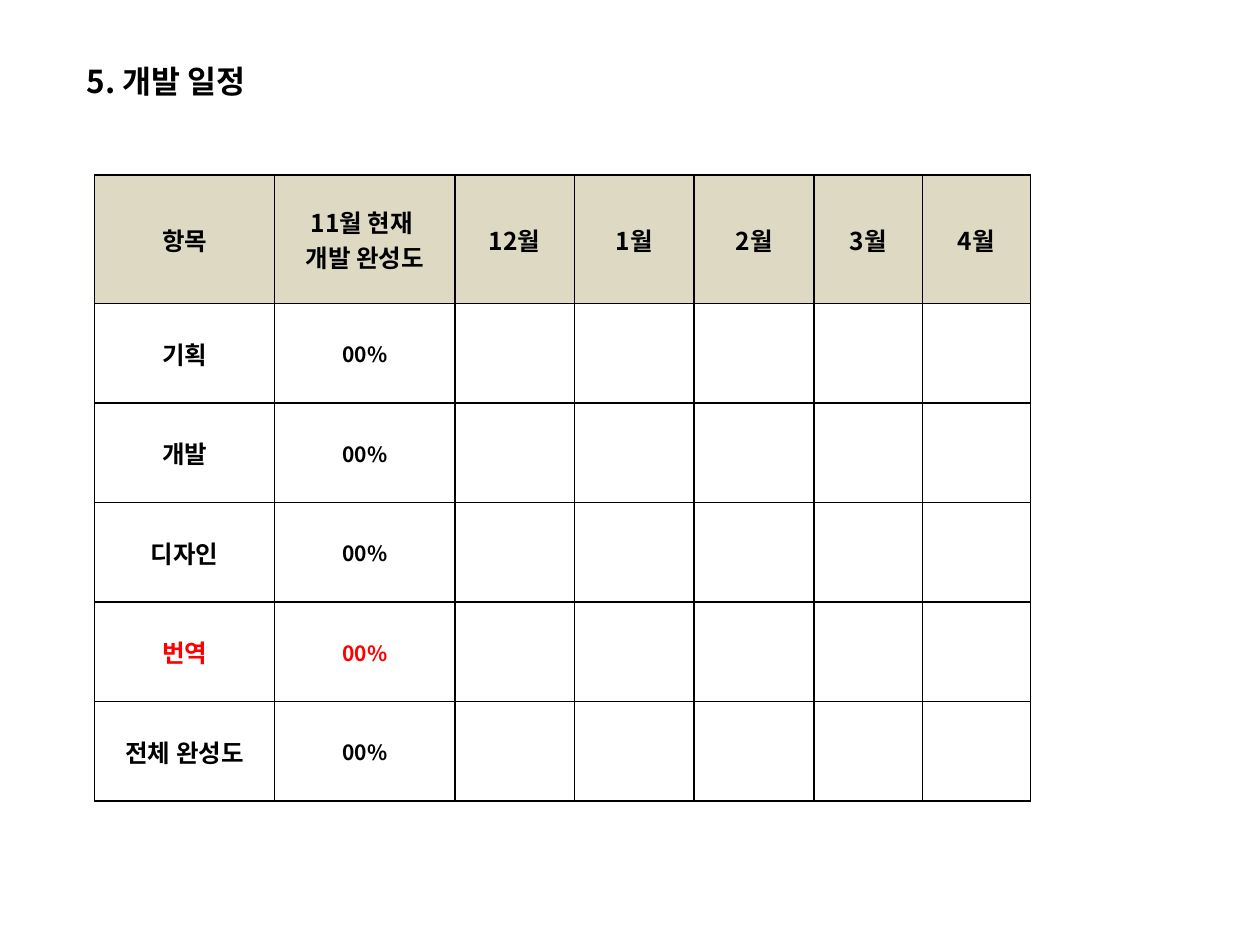
from lxml.etree import SubElement
from pptx import Presentation
from pptx.dml.color import RGBColor
from pptx.enum.text import MSO_ANCHOR as Anchor, MSO_AUTO_SIZE as AutoSize, PP_ALIGN as Align
from pptx.oxml.ns import qn
from pptx.util import Inches, Pt

FONT = "Noto Sans CJK KR"
BLACK = RGBColor(0x00, 0x00, 0x00)
RED = RGBColor(0xFF, 0x00, 0x00)
BEIGE = RGBColor(0xDD, 0xD9, 0xC3)

TITLE = "5. 개발 일정"
HEADERS = ["항목", "11월 현재 \n개발 완성도", "12월", "1월", "2월", "3월", "4월"]
PROGRESS = [
    ("기획", "00%", BLACK),
    ("개발", "00%", BLACK),
    ("디자인", "00%", BLACK),
    ("번역", "00%", RED),
    ("전체 완성도", "00%", BLACK),
]
COLUMN_WIDTHS = [1.43] * 2 + [0.95] * 3 + [0.86] * 2
ROW_HEIGHTS = [1.02] + [0.79] * len(PROGRESS)


def write(text_frame, text, size, color, alignment):
    text_frame.text = text
    for paragraph in text_frame.paragraphs:
        paragraph.alignment = alignment
        for run in paragraph.runs:
            for name, value in {"name": FONT, "size": Pt(size), "bold": True}.items():
                setattr(run.font, name, value)
            run.font.color.rgb = color
            SubElement(run.font._element, qn("a:ea"), typeface=FONT)


def add_borders(cell):
    properties = cell._tc.get_or_add_tcPr()
    for side in ("lnL", "lnR", "lnT", "lnB"):
        line = SubElement(properties, qn(f"a:{side}"), w=str(Pt(1)))
        fill = SubElement(line, qn("a:solidFill"))
        SubElement(fill, qn("a:srgbClr"), val=str(BLACK))


def add_title(slide):
    box = slide.shapes.add_textbox(Inches(0.59), Inches(0.44), Inches(6.54), Inches(0.4))
    box.text_frame.word_wrap = True
    box.text_frame.auto_size = AutoSize.SHAPE_TO_FIT_TEXT
    write(box.text_frame, TITLE, 18, BLACK, Align.LEFT)


def add_schedule(slide):
    table = slide.shapes.add_table(
        len(ROW_HEIGHTS), len(COLUMN_WIDTHS), Inches(0.75), Inches(1.39),
        Inches(sum(COLUMN_WIDTHS)), Inches(sum(ROW_HEIGHTS)),
    ).table
    table.horz_banding = False
    for column, width in zip(table.columns, COLUMN_WIDTHS):
        column.width = Inches(width)
    for row, height in zip(table.rows, ROW_HEIGHTS):
        row.height = Inches(height)

    for cell in table.iter_cells():
        cell.vertical_anchor = Anchor.MIDDLE
        add_borders(cell)
        cell.fill.background()

    for cell, header in zip(table.rows[0].cells, HEADERS):
        cell.fill.solid()
        cell.fill.fore_color.rgb = BEIGE
        write(cell.text_frame, header, 14, BLACK, Align.CENTER)

    for row, (item, progress, color) in enumerate(PROGRESS, start=1):
        write(table.cell(row, 0).text_frame, item, 14, color, Align.CENTER)
        write(table.cell(row, 1).text_frame, progress, 12, color, Align.CENTER)


def main():
    presentation = Presentation()
    presentation.slide_width = Inches(10)
    presentation.slide_height = Inches(7.5)
    slide = presentation.slides.add_slide(presentation.slide_layouts[6])
    add_title(slide)
    add_schedule(slide)
    presentation.save("out.pptx")


if __name__ == "__main__":
    main()
